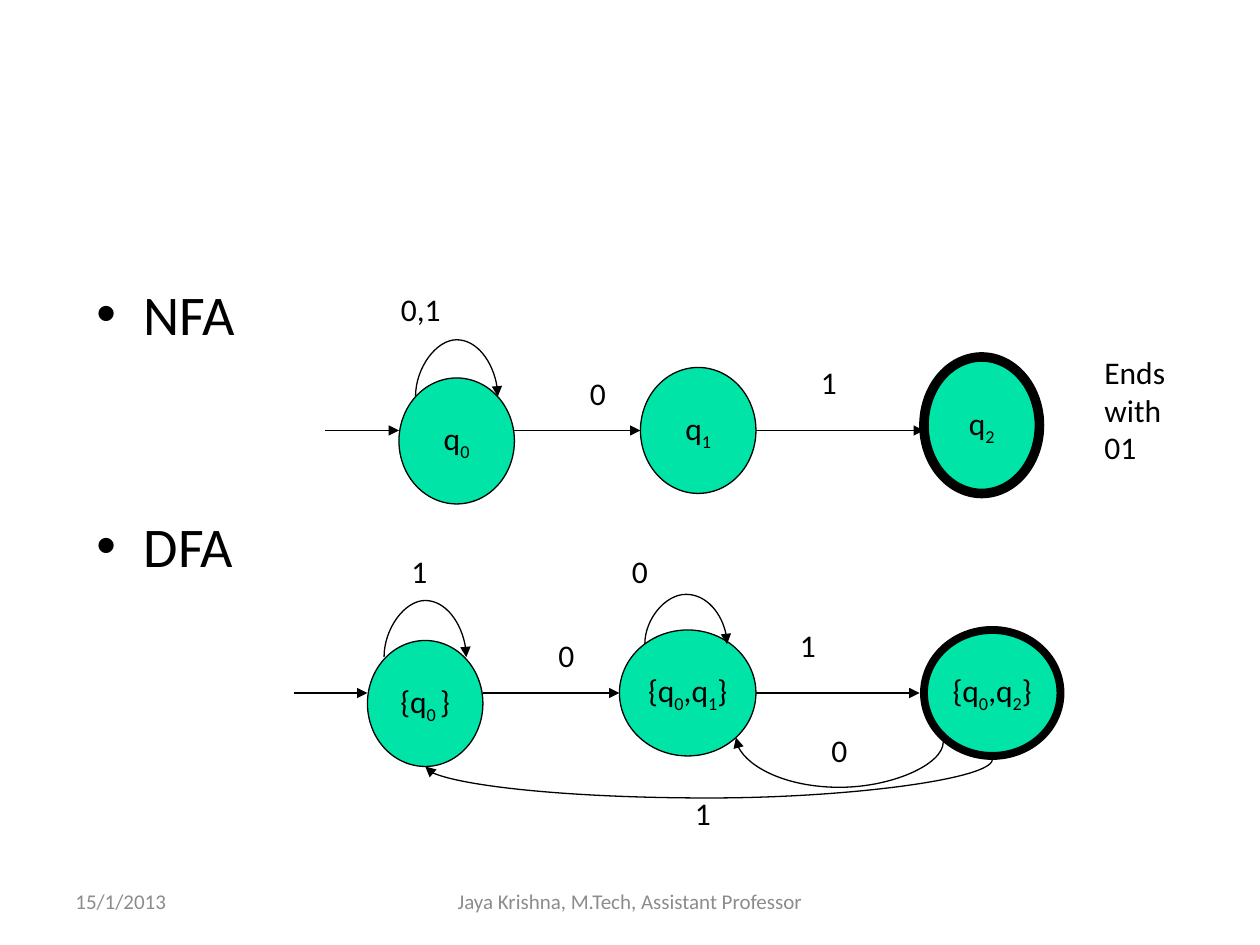
from lxml import etree
from pptx import Presentation
from pptx.dml.color import RGBColor
from pptx.enum import shapes, text
from pptx.oxml.ns import qn
from pptx.util import Pt

BLACK, GREEN, GREY = "000000", "00E4A8", "8C8C8C"


def rgb(value):
    return RGBColor.from_string(value)


class Diagram:
    """Draws automaton parts on one slide; all lengths are in points."""

    font = "Calibri"
    size = 18
    thin = 0.75

    def __init__(self, slide):
        self.s = slide

    def style(self, p, size=None, color=BLACK):
        for r in p.runs:
            r.font.name = self.font
            r.font.size = Pt(size or self.size)
            r.font.color.rgb = rgb(color)

    def label(self, x, y, content, w=27, h=36, size=None, color=BLACK,
              align=text.PP_ALIGN.LEFT, anchor=text.MSO_ANCHOR.TOP):
        sp = self.s.shapes.add_textbox(Pt(x), Pt(y), Pt(w), Pt(h))
        tf = sp.text_frame
        tf.word_wrap = True
        tf.vertical_anchor = anchor
        tf.text = content
        for p in tf.paragraphs:
            p.alignment = align
            self.style(p, size, color)
        return sp

    def bullets(self, x, y, w, h, items, size, gaps, indent=27):
        sp = self.label(x, y, "\n".join(items), w, h, size)
        for p, gap in zip(sp.text_frame.paragraphs, gaps):
            p.space_before = Pt(gap)
            pPr = p._p.get_or_add_pPr()
            pPr.set("marL", str(Pt(indent)))
            pPr.set("indent", str(-Pt(indent)))
            etree.SubElement(pPr, qn("a:buFont")).set("typeface", "Arial")
            etree.SubElement(pPr, qn("a:buChar")).set("char", "•")

    def state(self, x, y, w, h, parts, border=None):
        """Every second entry of parts is a subscript."""
        sp = self.s.shapes.add_shape(shapes.MSO_SHAPE.OVAL,
                                     Pt(x), Pt(y), Pt(w), Pt(h))
        sp.shadow.inherit = False
        sp.fill.solid()
        sp.fill.fore_color.rgb = rgb(GREEN)
        sp.line.color.rgb = rgb(BLACK)
        sp.line.width = Pt(border or self.thin)
        tf = sp.text_frame
        tf.word_wrap = False
        tf.vertical_anchor = text.MSO_ANCHOR.MIDDLE
        p = tf.paragraphs[0]
        p.alignment = text.PP_ALIGN.CENTER
        for i, part in enumerate(parts):
            r = p.add_run()
            r.text = part
            if i % 2:
                r._r.get_or_add_rPr().set("baseline", "-25000")
        self.style(p)

    def connector(self, kind, x1, y1, x2, y2):
        c = self.s.shapes.add_connector(kind, Pt(x1), Pt(y1), Pt(x2), Pt(y2))
        c.line.color.rgb = rgb(BLACK)
        c.line.width = Pt(self.thin)
        etree.SubElement(c.line._get_or_add_ln(), qn("a:tailEnd")).set("type", "triangle")
        etree.SubElement(c._element.spPr, qn("a:effectLst"))
        return c

    def arrow(self, x1, x2, y):
        self.connector(shapes.MSO_CONNECTOR.STRAIGHT, x1, y, x2, y)

    def curve(self, x1, y1, x2, y2, bend):
        """Curved arrow that leaves vertically and turns at height bend."""
        dx, dy = x2 - x1, (y2 - y1) or 0.1
        down = dy > 0
        flip = (dx > 0) == down
        # The connector is laid out sideways about its centre, then turned
        cx, cy = (x1 + x2) / 2, y1 + dy / 2
        w, h = abs(dy) / 2, abs(dx) / 2
        if flip:
            h = -h
        c = self.connector(shapes.MSO_CONNECTOR.CURVE, cx - w, cy - h, cx + w, cy + h)
        spPr = c._element.spPr
        spPr.find(qn("a:xfrm")).set("rot", str((90 if down else 270) * 60000))
        geom = spPr.find(qn("a:prstGeom"))
        av = geom.find(qn("a:avLst"))
        if av is None:
            av = etree.SubElement(geom, qn("a:avLst"))
        gd = etree.SubElement(av, qn("a:gd"))
        gd.set("name", "adj1")
        gd.set("fmla", f"val {round((bend - y1) / dy * 100000)}")


def main():
    prs = Presentation()
    prs.slide_width, prs.slide_height = Pt(720), Pt(540)
    d = Diagram(prs.slides.add_slide(prs.slide_layouts[6]))

    # Footer
    footer = dict(h=28.75, size=12, color=GREY, anchor=text.MSO_ANCHOR.MIDDLE)
    d.label(36, 500.5, "15/1/2013", w=168, **footer)
    d.label(246, 500.5, "Jaya Krishna, M.Tech, Assistant Professor", w=228,
            align=text.PP_ALIGN.CENTER, **footer)

    # Headings of the two automata
    d.bullets(48, 156, 612, 324, ["NFA", "DFA"], size=32, gaps=[2, 94.6])

    # NFA
    d.state(228, 216, 66, 72, ["q", "0"])
    d.state(366, 210, 66, 72, ["q", "1"])
    d.state(528, 204, 66, 78, ["q", "2"], border=5.5)
    for x1, x2 in [(186, 228), (294, 366), (432, 528)]:
        d.arrow(x1, x2, 246)
    d.curve(237.5, 226.5, 284.5, 226.5, bend=198)
    d.label(222, 162, "0,1", w=66)
    d.label(330, 210, "0")
    d.label(462, 204, "1")
    d.label(624, 198, "Ends with 01", w=66, h=73)

    # DFA
    d.state(210, 366, 66, 72, ["{q", "0 ", "}"])
    d.state(354, 360, 78, 72, ["{q", "0", ",q", "1", "}"])
    d.state(528, 360, 78, 72, ["{q", "0", ",q", "2", "}"], border=4.5)
    for x1, x2 in [(168, 210), (276, 354), (432, 525.5)]:
        d.arrow(x1, x2, 396)
    d.curve(219.5, 375.5, 266.5, 375.5, bend=347)
    d.curve(368.5, 368, 415.5, 368, bend=343)
    d.curve(567, 434, 243, 438, bend=456)
    d.curve(539, 424, 420.5, 421.5, bend=450)
    for x, y, symbol in [(228, 312, "1"), (354, 312, "0"), (312, 360, "0"),
                         (450, 354, "1"), (468, 414, "0"), (390, 450, "1")]:
        d.label(x, y, symbol)

    prs.save("out.pptx")


if __name__ == "__main__":
    main()
